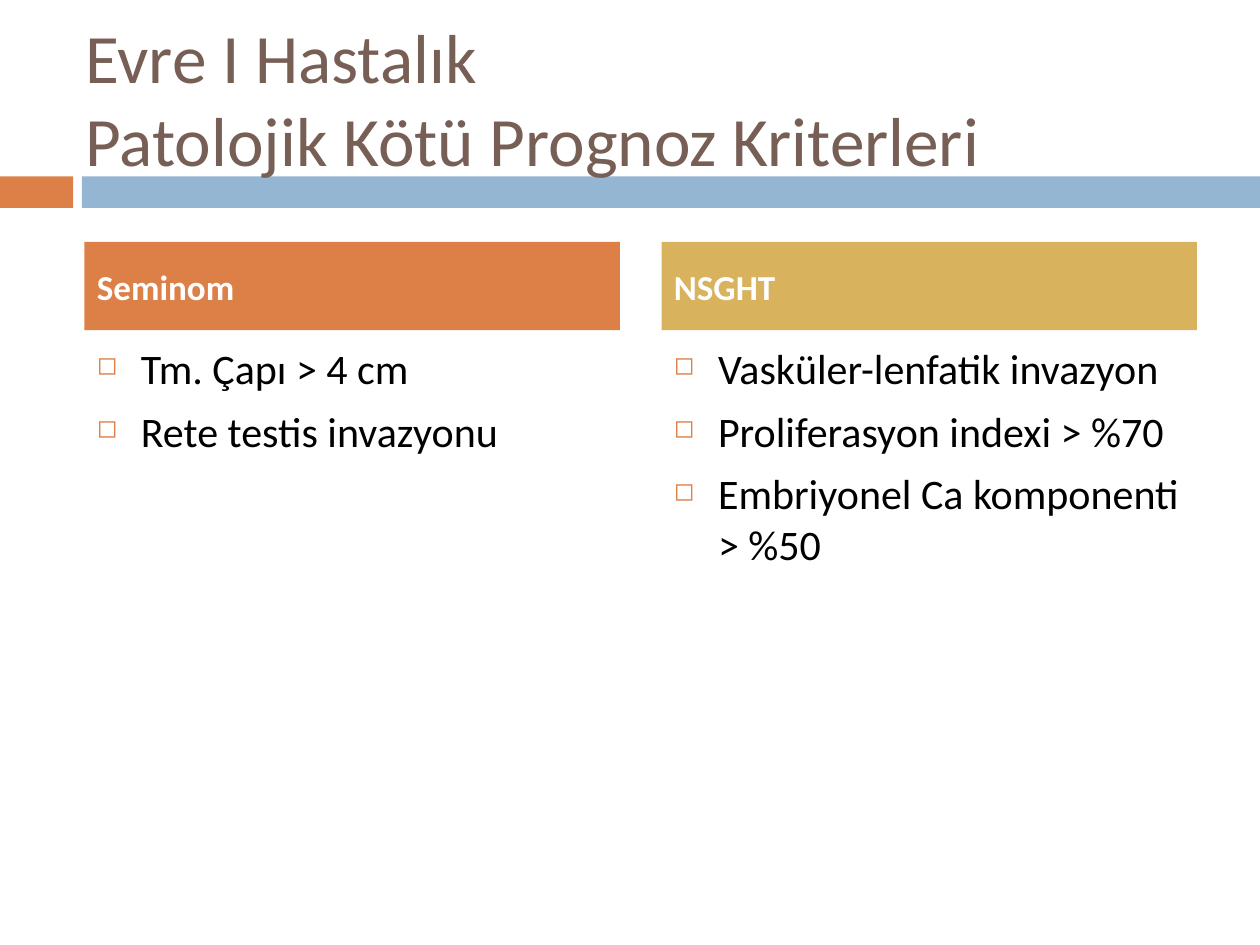
from dataclasses import dataclass

from lxml import etree
from pptx import Presentation
from pptx.dml.color import RGBColor
from pptx.enum.shapes import MSO_SHAPE
from pptx.enum.text import MSO_ANCHOR, PP_ALIGN
from pptx.oxml.ns import qn
from pptx.util import Inches, Pt

RECT = MSO_SHAPE.RECTANGLE
MIDDLE = MSO_ANCHOR.MIDDLE
TOP = MSO_ANCHOR.TOP
LEFT = PP_ALIGN.LEFT
FONT = "Calibri"
ORANGE = "DD8047"
BLUE = "94B6D2"
GOLD = "D8B25C"
BROWN = "775F55"
WHITE = "FFFFFF"
BLACK = "000000"


@dataclass
class Box:
    left: float
    top: float
    width: float
    height: float

    def emu(self) -> tuple:
        return tuple(map(Inches, (self.left, self.top, self.width, self.height)))


@dataclass
class Style:
    size: float
    color: str
    bold: bool = False
    gap: float = 0


@dataclass
class Column:
    left: float
    fill: str
    head: str
    items: list[str]


HEAD = Style(20, WHITE, True, 7)
BODY = Style(24, BLACK, gap=7)
TITLE = Style(39.6, BROWN)
COLUMNS = [
    Column(0.67, ORANGE, "Seminom", ["Tm. Çapı > 4 cm", "Rete testis invazyonu"]),
    Column(5.25, GOLD, "NSGHT", [
        "Vasküler-lenfatik invazyon",
        "Proliferasyon indexi > %70",
        "Embriyonel Ca komponenti > %50",
    ]),
]


def paint(target, color: str) -> None:
    target.rgb = RGBColor.from_string(color)


def add_bar(slide, box: Box, color: str):
    bar = slide.shapes.add_shape(RECT, *box.emu())
    bar.shadow.inherit = False
    bar.fill.solid()
    paint(bar.fill.fore_color, color)
    bar.line.fill.background()
    return bar


def write(shape, text: str, style: Style, anchor) -> None:
    frame = shape.text_frame
    frame.word_wrap = True
    frame.vertical_anchor = anchor
    frame.text = text
    for para in frame.paragraphs:
        para.alignment = LEFT
        para.space_before = Pt(style.gap)
        for run in para.runs:
            run.font.name = FONT
            run.font.size = Pt(style.size)
            run.font.bold = style.bold
            paint(run.font.color, style.color)


def add_bullet(para, color: str) -> None:
    props = para._p.get_or_add_pPr()
    indent = Inches(0.35)
    props.set("marL", str(indent))
    props.set("indent", str(-indent))
    tint = etree.SubElement(props, qn("a:buClr"))
    etree.SubElement(tint, qn("a:srgbClr"), val=color)
    etree.SubElement(props, qn("a:buSzPct"), val="60000")
    etree.SubElement(props, qn("a:buChar"), char="◻")


def add_column(slide, col: Column) -> None:
    head = add_bar(slide, Box(col.left, 1.92, 4.25, 0.7), col.fill)
    write(head, col.head, HEAD, MIDDLE)
    body = slide.shapes.add_textbox(*Box(col.left, 2.67, 4.25, 3.92).emu())
    write(body, "\n".join(col.items), BODY, TOP)
    for para in body.text_frame.paragraphs:
        add_bullet(para, ORANGE)


def main() -> None:
    deck = Presentation()
    deck.slide_width = Inches(10)
    deck.slide_height = Inches(7.5)
    slide = deck.slides.add_slide(deck.slide_layouts[6])
    add_bar(slide, Box(0, 1.4, 0.58, 0.25), ORANGE)
    add_bar(slide, Box(0.65, 1.4, 9.35, 0.25), BLUE)
    title = slide.shapes.add_textbox(*Box(0.58, 0.3, 8.92, 0.95).emu())
    write(title, "Evre I Hastalık\vPatolojik Kötü Prognoz Kriterleri", TITLE, MIDDLE)
    for col in COLUMNS:
        add_column(slide, col)
    deck.save("out.pptx")


if __name__ == "__main__":
    main()
